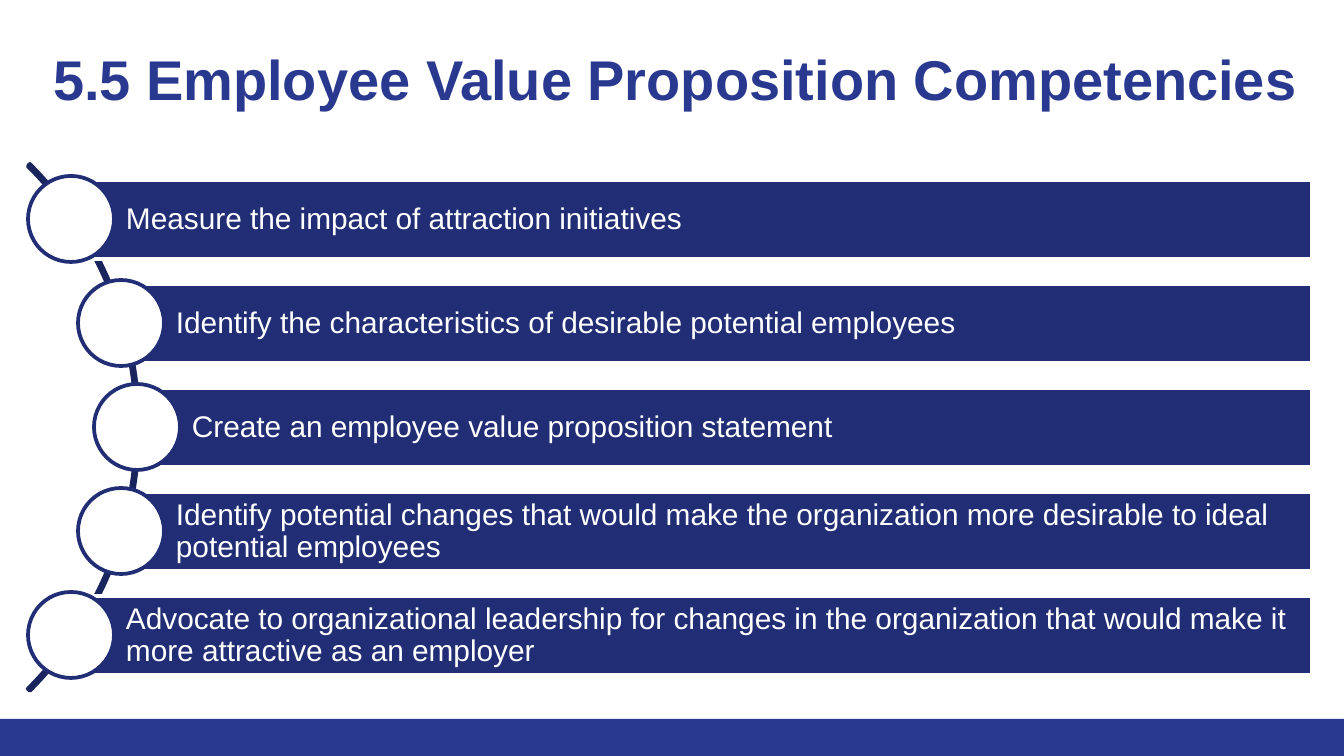
from pptx import Presentation, util as u
from pptx.dml.color import RGBColor
from pptx.enum import shapes, text

PX = 914400 / 134.4  # EMU in one px
BLUE = RGBColor(0x2A, 0x39, 0x90)
NAVY = RGBColor(0x21, 0x2D, 0x74)
DARK = RGBColor(0x1A, 0x24, 0x5D)
WHITE = RGBColor(0xFF, 0xFF, 0xFF)

COMPETENCIES = [
    (71, "Measure the impact of attraction initiatives"),
    (121, "Identify the characteristics of desirable potential employees"),
    (137, "Create an employee value proposition statement"),
    (121, "Identify potential changes that would make the organization "
          "more desirable to ideal potential employees"),
    (71, "Advocate to organizational leadership for changes in the "
         "organization that would make it more attractive as an employer"),
]
FIRST_Y, PITCH = 219, 104  # middle of the first bar, step between bars
BAR_RIGHT, BAR_H, CIRCLE = 1312, 79, 86


def px(n):
    return u.Emu(round(n * PX))


def add_shape(kind, x, y, w, h, fill=None, line=None):
    """Add a shape without shadow; None means no fill or no line."""
    sp = s.shapes.add_shape(kind, px(x), px(y), px(w), px(h))
    sp.shadow.inherit = False
    if fill is None:
        sp.fill.background()
    else:
        sp.fill.solid()
        sp.fill.fore_color.rgb = fill
    if line is None:
        sp.line.fill.background()
    else:
        sp.line.color.rgb = line
        sp.line.width = u.Pt(2)
    return sp


prs = Presentation()
prs.slide_width, prs.slide_height = px(1344), px(756)
s = prs.slides.add_slide(prs.slide_layouts[5])
MSO = shapes.MSO_SHAPE

add_shape(MSO.RECTANGLE, 0, 719, 1344, 37, BLUE)

title = s.shapes.title
title.left, title.top, title.width, title.height = px(40), px(27), px(1279), px(89)
tf = title.text_frame
tf.text = "5.5 Employee Value Proposition Competencies"
frame_format = {
    "margin_left": px(13), "margin_right": px(13),
    "margin_top": px(18), "margin_bottom": px(8),
    "vertical_anchor": text.MSO_ANCHOR.TOP,
    "auto_size": text.MSO_AUTO_SIZE.NONE, "word_wrap": True,
}
for name, value in frame_format.items():
    setattr(tf, name, value)
p = tf.paragraphs[0]
p.alignment = text.PP_ALIGN.LEFT
for name, value in {"name": "Arial", "size": u.Pt(30), "bold": True}.items():
    setattr(p.font, name, value)
p.font.color.rgb = BLUE

arc = add_shape(MSO.BLOCK_ARC, -606, 55, 745, 745, line=DARK)
for i, value in enumerate((189, 27, 0.004)):
    arc.adjustments[i] = value

bar_format = {
    "margin_left": px(55), "margin_right": px(5),
    "margin_top": px(5), "margin_bottom": px(5),
    "vertical_anchor": text.MSO_ANCHOR.MIDDLE, "word_wrap": True,
}
for i, (x, label) in enumerate(COMPETENCIES):
    y = FIRST_Y + i * PITCH
    bar = add_shape(MSO.RECTANGLE, x, y - BAR_H // 2, BAR_RIGHT - x, BAR_H, NAVY, WHITE)
    tf = bar.text_frame
    for name, value in bar_format.items():
        setattr(tf, name, value)
    tf.text = label
    p = tf.paragraphs[0]
    p.alignment, p.line_spacing = text.PP_ALIGN.LEFT, 0.9
    p.font.name, p.font.size = "Arial", u.Pt(16)
    p.font.color.rgb = WHITE
    add_shape(MSO.OVAL, x - CIRCLE // 2, y - CIRCLE // 2, CIRCLE, CIRCLE, WHITE, NAVY)

prs.save("out.pptx")
